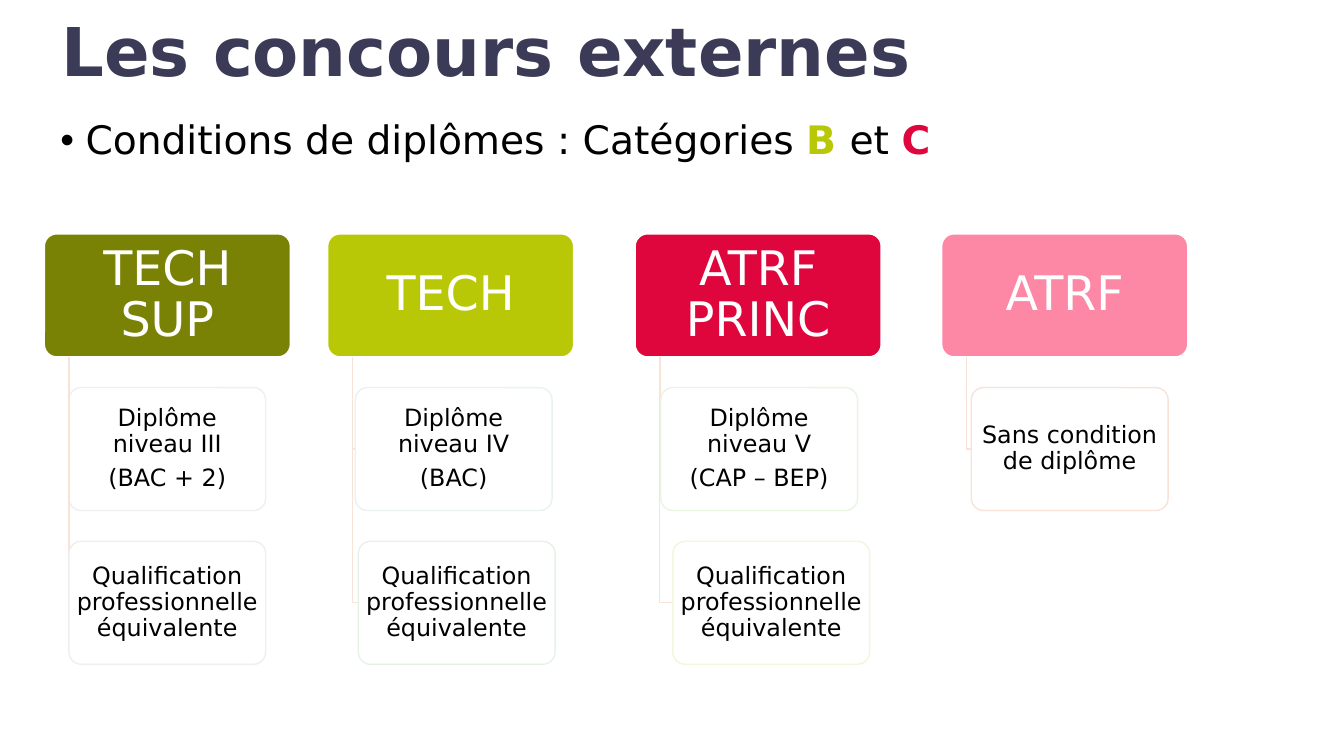
from lxml import etree
from pptx import Presentation
from pptx import util as u
from pptx.dml import color
from pptx.enum import shapes, text
from pptx.oxml import ns

FONT = "DejaVu Sans"
ROW_HEIGHT = 1.22
ROW_PITCH = ROW_HEIGHT * 1.25
ROW_TOP = 2.32
HEADER_WIDTH = ROW_HEIGHT * 2
LEAF_WIDTH = HEADER_WIDTH * 0.8
HEADER_STYLE = {"size": 34, "hue": "FFFFFF", "margins": (0.07, 0.05)}
LEAF_STYLE = {"size": 17, "hue": "000000", "margins": (0.04, 0.02)}
CENTRED = {"alignment": text.PP_ALIGN.CENTER, "line_spacing": 0.9}
BRANCH_HUE = "F7E3D8"
QUALIFICATION = ["Qualification professionnelle équivalente"]


def paint(part, hue):
    if hasattr(part, "solid"):
        part.solid()
        part.fore_color.rgb = color.RGBColor.from_string(hue)
    else:
        part.color.rgb = color.RGBColor.from_string(hue)


def add_span(para, words, size, hue, bold=False):
    span = para.add_run()
    span.text = words
    for name, value in {"name": FONT, "size": u.Pt(size), "bold": bold}.items():
        setattr(span.font, name, value)
    paint(span.font, hue)


deck = Presentation()
deck.slide_width, deck.slide_height = u.Inches(13.33), u.Inches(7.5)
page = deck.slides.add_slide(deck.slide_layouts[6])

headings = [
    ((0.51, 0.13, 11.27, 0.77), 48, [("Les concours externes", "3B3A57", True)]),
    ((0.5, 1.15, 9, 0.89), 28, [
        ("Conditions de diplômes : Catégories ", "000000", False),
        ("B ", "B9C806", True),
        ("et ", "000000", False),
        ("C", "DF063E", True),
    ]),
]
for place, size, spans in headings:
    box = page.shapes.add_textbox(*map(u.Inches, place))
    box.text_frame.word_wrap = True
    para = box.text_frame.paragraphs[0]
    para.line_spacing = 0.9
    for words, hue, bold in spans:
        add_span(para, words, size, hue, bold)

para.space_before = u.Pt(10)
bullet_format = para._p.get_or_add_pPr()
bullet_format.set("marL", str(u.Inches(0.25)))
bullet_format.set("indent", str(-u.Inches(0.25)))
etree.SubElement(bullet_format, ns.qn("a:buFont")).set("typeface", "Arial")
etree.SubElement(bullet_format, ns.qn("a:buChar")).set("char", "•")

columns = [
    (0.44, "TECH SUP", "798204", [
        (0, "EFEFF1", ["Diplôme niveau III", "(BAC + 2)"]),
        (0, "ECEFF1", QUALIFICATION),
    ]),
    (3.25, "TECH", "B9C806", [
        (0.03, "E8F2F0", ["Diplôme niveau IV", "(BAC)"]),
        (0.06, "E5F3E7", QUALIFICATION),
    ]),
    (6.3, "ATRF PRINC", "DF063E", [
        (0.01, "E9F4E1", ["Diplôme niveau V", "(CAP – BEP)"]),
        (0.13, "F5F4DD", QUALIFICATION),
    ]),
    (9.34, "ATRF", "FC88A6", [
        (0.05, "F7E3D8", ["Sans condition de diplôme"]),
    ]),
]

for left, title, header_hue, leaves in columns:
    trunk = left + HEADER_WIDTH / 10
    trunk_top = ROW_TOP + ROW_HEIGHT
    cards = [(left, HEADER_WIDTH, header_hue, "FFFFFF", [title], HEADER_STYLE)]
    for shift, edge_hue, lines in leaves:
        cards.append((trunk + shift, LEAF_WIDTH, "FFFFFF", edge_hue, lines, LEAF_STYLE))

    for row, (card_left, width, fill_hue, edge_hue, lines, style) in enumerate(cards):
        top = ROW_TOP + row * ROW_PITCH
        middle = top + ROW_HEIGHT / 2
        straight = row > 0 and card_left == trunk
        if straight:
            branch = page.shapes.add_connector(
                shapes.MSO_CONNECTOR.STRAIGHT,
                *map(u.Inches, (trunk, trunk_top, trunk, middle)))
            etree.SubElement(branch._element.spPr, ns.qn("a:effectLst"))
        elif row > 0:
            corners = [(u.Inches(x), u.Inches(y)) for x, y in
                       ((trunk, trunk_top), (trunk, middle), (card_left, middle))]
            outline = page.shapes.build_freeform(*corners[0])
            outline.add_line_segments(corners[1:], close=False)
            branch = outline.convert_to_shape()
            branch.fill.background()
            branch.shadow.inherit = False
        if row > 0:
            paint(branch.line, BRANCH_HUE)
            branch.line.width = u.Pt(1)

        card = page.shapes.add_shape(
            shapes.MSO_SHAPE.ROUNDED_RECTANGLE,
            *map(u.Inches, (card_left, top, width, ROW_HEIGHT)))
        card.adjustments[0] = 0.1
        card.shadow.inherit = False
        paint(card.fill, fill_hue)
        paint(card.line, edge_hue)
        card.line.width = u.Pt(1)
        if row > 0:
            shade = card._element.spPr.find(ns.qn("a:solidFill"))[0]
            etree.SubElement(shade, ns.qn("a:alpha")).set("val", "90000")
        if straight:
            branch.end_connect(card, 1)

        frame = card.text_frame
        side, edge = map(u.Inches, style["margins"])
        frame_format = {
            "word_wrap": True, "vertical_anchor": text.MSO_ANCHOR.MIDDLE,
            "margin_left": side, "margin_right": side,
            "margin_top": edge, "margin_bottom": edge,
        }
        for name, value in frame_format.items():
            setattr(frame, name, value)
        for number, words in enumerate(lines):
            para = frame.add_paragraph() if number else frame.paragraphs[0]
            for name, value in CENTRED.items():
                setattr(para, name, value)
            para.space_after = u.Pt(round(style["size"] * 0.35))
            add_span(para, words, style["size"], style["hue"])

deck.save("out.pptx")
